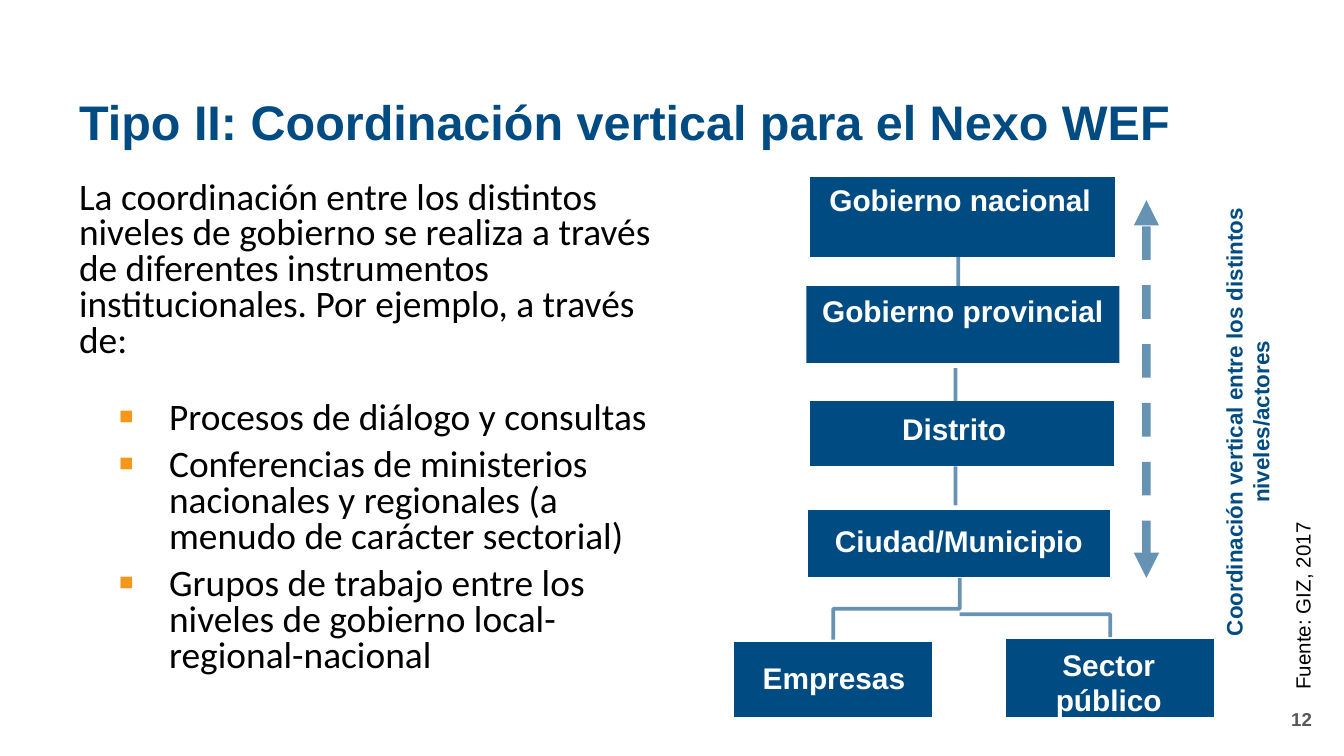
from typing import NamedTuple, Optional

from lxml.etree import SubElement
from pptx import Presentation
from pptx.dml.color import RGBColor
from pptx.enum.dml import MSO_LINE as Dash
from pptx.enum.shapes import MSO_CONNECTOR as Link, MSO_SHAPE as Form
from pptx.enum.text import MSO_ANCHOR as Anchor, MSO_AUTO_SIZE as Fit, PP_ALIGN as Align
from pptx.oxml.ns import qn
from pptx.util import Inches, Pt

COLORS = {
    "blue": "004C82",
    "white": "FFFFFF",
    "black": "000000",
    "gray": "575756",
    "orange": "F4971A",
}


class Area(NamedTuple):
    left: float
    top: float
    width: float
    height: float


class Level(NamedTuple):
    text: str
    box: Area
    label: Optional[Area]  # None: the text sits in the box itself


class Path(NamedTuple):
    start: tuple
    end: tuple
    kind: str = "line"
    turn: int = 0


INTRO = ("La coordinación entre los distintos niveles de gobierno se realiza a través "
         "de diferentes instrumentos institucionales. Por ejemplo, a través de:")
ITEMS = [
    "Procesos de diálogo y consultas",
    "Conferencias de ministerios nacionales y regionales (a menudo de carácter sectorial)",
    "Grupos de trabajo entre los niveles de gobierno local-regional-nacional",
]
LEVELS = [
    Level("Gobierno provincial", Area(6, 2.13, 2.33, 0.57), None),
    Level("Ciudad/Municipio", Area(6, 3.78, 2.27, 0.53), Area(6, 3.84, 2.27, 0.33)),
    Level("Sector público", Area(7.47, 4.74, 1.58, 0.61), Area(7.52, 4.76, 1.46, 0.33)),
    Level("Empresas", Area(5.45, 4.76, 1.5, 0.59), Area(5.45, 4.86, 1.51, 0.37)),
    Level("Distrito", Area(6.01, 2.97, 2.29, 0.51), Area(5.91, 3.01, 2.38, 0.33)),
    Level("Gobierno nacional", Area(6.01, 1.3, 2.3, 0.63), Area(6.01, 1.3, 2.27, 0.33)),
]
PATHS = [
    Path((6.44, 4.06), (6.9, 5), "bentConnector3", 90),
    Path((7.14, 4.57), (8.26, 4.74), "bentConnector2"),
    Path((7.11, 3.47), (7.11, 3.76)),
    Path((7.13, 1.84), (7.13, 2.16)),
    Path((7.11, 2.74), (7.11, 3.02)),
]


def color(name: str) -> RGBColor:
    return RGBColor.from_string(COLORS[name])


def style(para, size: float, tint: str, bold: bool = False, face: str = "Arial") -> None:
    for run in para.runs:
        font = run.font
        font.name, font.size, font.bold = face, Pt(size), bold
        font.color.rgb = color(tint)


def write(shape, text: str, size: float, tint: str, bold: bool = True,
          align=Align.LEFT, anchor=Anchor.TOP, grow: bool = False) -> None:
    frame = shape.text_frame
    frame.word_wrap = True
    frame.vertical_anchor = anchor
    frame.auto_size = Fit.SHAPE_TO_FIT_TEXT if grow else Fit.NONE
    frame.text = text
    para = frame.paragraphs[0]
    para.alignment = align
    style(para, size, tint, bold)


def add_text(slide, area: Area, text: str, size: float, tint: str, turn: int = 0, **look):
    box = slide.shapes.add_textbox(*map(Inches, area))
    box.rotation = turn
    write(box, text, size, tint, **look)
    return box


def add_level(slide, level: Level) -> None:
    box = slide.shapes.add_shape(Form.RECTANGLE, *map(Inches, level.box))
    box.shadow.inherit = False
    box.fill.solid()
    box.fill.fore_color.rgb = color("blue")
    look = dict(align=Align.CENTER, grow=True)
    if level.label is None:
        box.line.fill.background()
        write(box, level.text, 16, "white", **look)
    else:
        box.line.color.rgb = color("white")
        box.line.width = Pt(2)
        add_text(slide, level.label, level.text, 16, "white", **look)


def add_path(slide, path: Path, width: float = 2):
    """Draw a blue line at 60 % opacity, straight or bent."""
    link = Link.STRAIGHT if path.kind == "line" else Link.ELBOW
    line = slide.shapes.add_connector(link, *map(Inches, path.start + path.end))
    line.line.color.rgb = color("blue")
    line.line.width = Pt(width)
    props = line._element.spPr
    props.find(qn("a:prstGeom")).set("prst", path.kind)
    if path.turn:
        props.find(qn("a:xfrm")).set("rot", str(path.turn * 60000))
    SubElement(next(props.iter(qn("a:srgbClr"))), qn("a:alpha"), val="60000")
    SubElement(props, qn("a:effectLst"))
    return line


def add_arrow(slide, path: Path) -> None:
    line = add_path(slide, path, 4.5)
    line.line.dash_style = Dash.DASH
    for end in ("a:headEnd", "a:tailEnd"):
        SubElement(line.line._ln, qn(end), type="triangle")


def add_bullet(para) -> None:
    props = para._p.get_or_add_pPr()
    props.set("lvl", "1")
    props.set("marL", str(Inches(0.67)))
    props.set("indent", str(Inches(-0.38)))
    tint = SubElement(props, qn("a:buClr"))
    SubElement(tint, qn("a:srgbClr"), val=COLORS["orange"])
    SubElement(props, qn("a:buSzPct"), val="125000")
    SubElement(props, qn("a:buFont"), typeface="Arial")
    SubElement(props, qn("a:buChar"), char="▪")


def add_body(slide) -> None:
    frame = slide.shapes.add_textbox(*map(Inches, Area(0.49, 1.3, 4.64, 4.05))).text_frame
    frame.word_wrap = True
    for i, text in enumerate([INTRO] + ITEMS):
        para = frame.add_paragraph() if i else frame.paragraphs[0]
        para.text = text
        if i:
            add_bullet(para)
            para.space_before = Pt(22 if i == 1 else 6)
        para.line_spacing = 0.8
        style(para, 20, "black", face="Calibri")


def main() -> None:
    deck = Presentation()
    deck.slide_width = Inches(10)
    deck.slide_height = deck.slide_width * 9 // 16
    slide = deck.slides.add_slide(deck.slide_layouts[6])

    title = add_text(slide, Area(0.49, 0.63, 9.37, 0.59),
                     "Tipo II: Coordinación vertical para el Nexo WEF",
                     26, "blue", anchor=Anchor.MIDDLE)
    title.text_frame.paragraphs[0].line_spacing = 0.9
    add_body(slide)
    add_text(slide, Area(7.61, 5.2, 2.25, 0.3), "12", 10, "gray",
             align=Align.RIGHT, anchor=Anchor.MIDDLE)

    for level in LEVELS:
        add_level(slide, level)
    for path in PATHS:
        add_path(slide, path)
    add_arrow(slide, Path((8.53, 4.3), (8.53, 1.49)))

    add_text(slide, Area(6.96, 2.99, 4.44, 0.3),
             "Coordinación vertical entre los distintos niveles/actores",
             12, "blue", turn=270, align=Align.CENTER, grow=True)
    add_text(slide, Area(8.75, 4.14, 1.89, 0.29), "Fuente: GIZ, 2017",
             11, "black", turn=270, bold=False, grow=True)
    deck.save("out.pptx")


if __name__ == "__main__":
    main()
